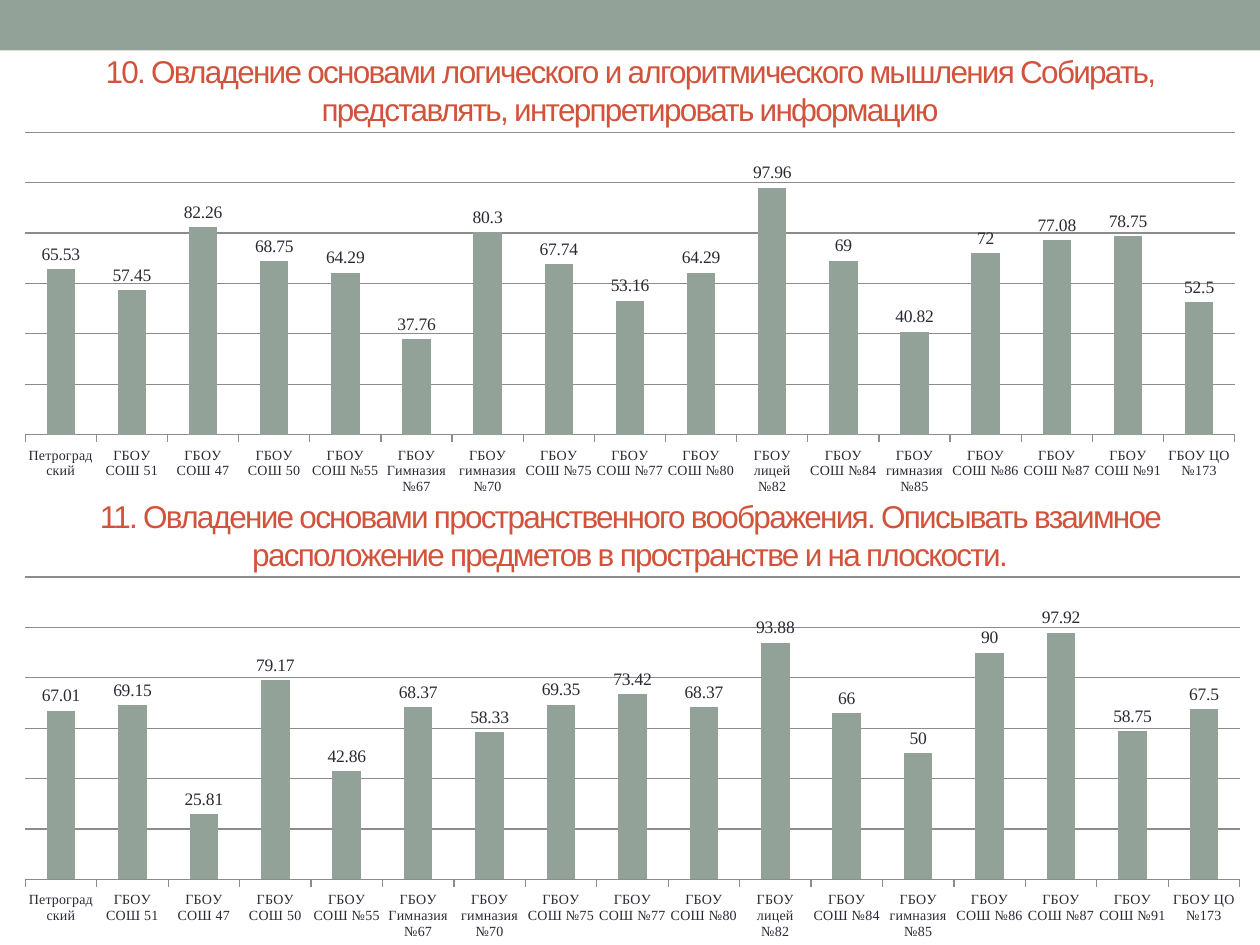
"""Builds a slide with two column charts of school results."""
from dataclasses import dataclass

from lxml import etree
from pptx import Presentation
from pptx.chart.data import CategoryChartData
from pptx.dml.color import RGBColor
from pptx.enum.chart import XL_CHART_TYPE, XL_LABEL_POSITION, XL_TICK_LABEL_POSITION, XL_TICK_MARK
from pptx.enum.shapes import MSO_SHAPE
from pptx.enum.text import MSO_ANCHOR, PP_ALIGN
from pptx.oxml import parse_xml
from pptx.util import Inches, Pt

COLUMNS = XL_CHART_TYPE.COLUMN_CLUSTERED
ABOVE_BAR = XL_LABEL_POSITION.OUTSIDE_END
LOW = XL_TICK_LABEL_POSITION.LOW
TICK_OUT, TICK_NONE = XL_TICK_MARK.OUTSIDE, XL_TICK_MARK.NONE
RECTANGLE = MSO_SHAPE.RECTANGLE
MIDDLE, CENTER = MSO_ANCHOR.MIDDLE, PP_ALIGN.CENTER
CHART_NS = "http://schemas.openxmlformats.org/drawingml/2006/chart"
GRID_COLUMNS, GRID_ROWS = 10, 7.5

SCHOOLS = ["Петроградский", "ГБОУ СОШ 51", "ГБОУ СОШ 47", "ГБОУ СОШ 50", "ГБОУ СОШ №55",
           "ГБОУ Гимназия №67", "ГБОУ гимназия №70", "ГБОУ СОШ №75", "ГБОУ СОШ №77",
           "ГБОУ СОШ №80", "ГБОУ лицей №82", "ГБОУ СОШ №84", "ГБОУ гимназия №85",
           "ГБОУ СОШ №86", "ГБОУ СОШ №87", "ГБОУ СОШ №91", "ГБОУ ЦО №173"]
LOGIC_SCORES = [65.53, 57.45, 82.26, 68.75, 64.29, 37.76, 80.3, 67.74, 53.16,
                64.29, 97.96, 69, 40.82, 72, 77.08, 78.75, 52.5]
SPACE_SCORES = [67.01, 69.15, 25.81, 79.17, 42.86, 68.37, 58.33, 69.35, 73.42,
                68.37, 93.88, 66, 50, 90, 97.92, 58.75, 67.5]
SECTIONS = [
    ("10. Овладение основами логического и алгоритмического мышления Собирать, "
     "представлять, интерпретировать информацию",
     (0, 0.44, 10, 0.55), (0, 0.99, 10, 3), LOGIC_SCORES),
    ("11. Овладение основами пространственного воображения. Описывать взаимное "
     "расположение предметов в пространстве и на плоскости.",
     (0, 3.87, 10, 0.75), (0, 4.52, 10.04, 3), SPACE_SCORES),
]


@dataclass(frozen=True)
class Theme:
    """Colours, fonts and type sizes of the slide."""
    sage: RGBColor = RGBColor(0x93, 0xA2, 0x99)
    red: RGBColor = RGBColor(0xD2, 0x53, 0x3C)
    ink: RGBColor = RGBColor(0x29, 0x29, 0x34)
    rule: RGBColor = RGBColor(0x8C, 0x8C, 0x8C)
    title_font: str = "Arial"
    chart_font: str = "Times New Roman"
    title_size: int = 18
    label_size: int = 10
    axis_size: int = 8


def apply_format(target, values):
    """Set each attribute of the target from a dict."""
    for name, value in values.items():
        setattr(target, name, value)


class SlideBuilder:
    """Holds the theme and the current slide."""

    def __init__(self, deck, theme):
        """Add a blank slide to the deck."""
        self.theme = theme
        self.slide = deck.slides.add_slide(deck.slide_layouts[6])
        self.column = deck.slide_width / GRID_COLUMNS
        self.row = deck.slide_height / GRID_ROWS

    def place(self, area):
        """Turn grid columns and rows into slide lengths."""
        units = (self.column, self.row) * 2
        return [round(length * unit) for length, unit in zip(area, units)]

    def band(self, area):
        """Draw a plain coloured band."""
        shape = self.slide.shapes.add_shape(RECTANGLE, *self.place(area))
        shape.shadow.inherit = False
        shape.fill.solid()
        shape.fill.fore_color.rgb = self.theme.sage
        shape.line.fill.background()

    def heading(self, text, area):
        """Write a centred heading with tight letter spacing."""
        box = self.slide.shapes.add_textbox(*self.place(area))
        apply_format(box.text_frame, {"word_wrap": True, "vertical_anchor": MIDDLE})
        para = box.text_frame.paragraphs[0]
        para.alignment = CENTER
        span = para.add_run()
        span.text = text
        apply_format(span.font, {"name": self.theme.title_font, "size": Pt(self.theme.title_size)})
        span.font.color.rgb = self.theme.red
        span.font._element.set("spc", "-100")

    def column_chart(self, scores, area):
        """Draw labelled columns, one for each school."""
        theme = self.theme
        data = CategoryChartData()
        data.categories = SCHOOLS
        data.add_series("Series 1", scores)
        chart = self.slide.shapes.add_chart(COLUMNS, *self.place(area), data).chart
        apply_format(chart, {"has_legend": False, "has_title": False})
        apply_format(chart.font, {"name": theme.chart_font, "size": Pt(theme.label_size)})
        chart.font.color.rgb = theme.ink
        plot = chart.plots[0]
        apply_format(plot, {"gap_width": 150, "vary_by_categories": False, "has_data_labels": True})
        apply_format(plot.data_labels, {"show_value": True, "position": ABOVE_BAR,
                                        "number_format": "General",
                                        "number_format_is_linked": False})
        fill = plot.series[0].format.fill
        fill.solid()
        fill.fore_color.rgb = theme.sage
        names, values = chart.category_axis, chart.value_axis
        apply_format(names, {"major_tick_mark": TICK_OUT, "minor_tick_mark": TICK_NONE,
                             "tick_label_position": LOW})
        names.tick_labels.font.size = Pt(theme.axis_size)
        apply_format(values, {"minimum_scale": 0, "maximum_scale": 120, "major_unit": 20,
                              "has_major_gridlines": True, "visible": False})
        for line in (names.format.line, values.major_gridlines.format.line):
            line.width = Pt(0.75)
            line.color.rgb = theme.rule
        self.fix_plot_area(chart, {"x": 0.02, "y": 0.02, "w": 0.96, "h": 0.8})

    def fix_plot_area(self, chart, shares):
        """Place the inner plot area by shares of the chart."""
        plot_area = chart._chartSpace.chart.plotArea
        for old in plot_area.findall(f"{{{CHART_NS}}}layout"):
            plot_area.remove(old)
        layout = parse_xml(f'<c:layout xmlns:c="{CHART_NS}"><c:manualLayout/></c:layout>')
        settings = {"layoutTarget": "inner", "xMode": "edge", "yMode": "edge", **shares}
        for name, value in settings.items():
            etree.SubElement(layout[0], f"{{{CHART_NS}}}{name}").set("val", str(value))
        plot_area.insert(0, layout)


def main():
    """Build and save the deck."""
    deck = Presentation()
    apply_format(deck, {"slide_width": Inches(10), "slide_height": Inches(7.5)})
    page = SlideBuilder(deck, Theme())
    page.band((0, 0, 10, 0.4))
    for title, title_area, chart_area, scores in SECTIONS:
        page.heading(title, title_area)
        page.column_chart(scores, chart_area)
    deck.save("out.pptx")


if __name__ == "__main__":
    main()
